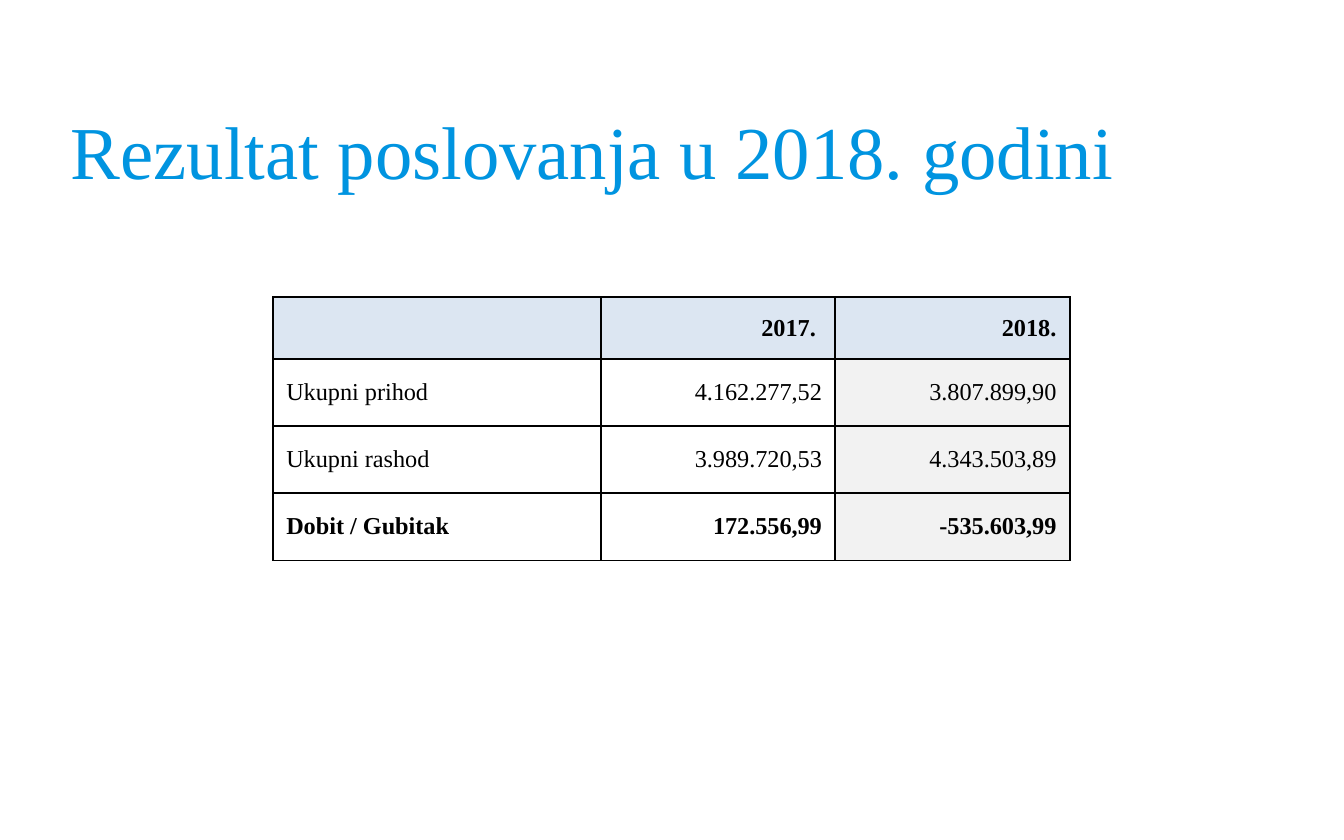
from lxml import etree
from pptx import Presentation, util as u
from pptx.dml.color import RGBColor
from pptx.enum import text
from pptx.oxml.ns import qn

# Content
TITLE = "Rezultat poslovanja u 2018. godini"
RESULTS = [
    ("", "2017. ", "2018."),
    ("Ukupni prihod", "4.162.277,52", "3.807.899,90"),
    ("Ukupni rashod", "3.989.720,53", "4.343.503,89"),
    ("Dobit / Gubitak", "172.556,99", "-535.603,99"),
]
COLUMN_WIDTHS = [2.44, 1.745, 1.745]
ROW_HEIGHTS = [0.46, 0.5, 0.5, 0.5]
BOLD_ROWS = (0, len(RESULTS) - 1)

FONT = "Times New Roman"
BLUE, BLACK, HEADER, CURRENT_YEAR = "0094E0", "000000", "DCE6F2", "F2F2F2"


def color(value):
    return RGBColor.from_string(value)


def add_run(paragraph, words, size, ink, bold=False):
    run = paragraph.add_run()
    run.text = words
    run.font.name = FONT
    run.font.size = u.Pt(size)
    run.font.bold = bold
    run.font.color.rgb = color(ink)


def add_borders(cell):
    properties = cell._tc.get_or_add_tcPr()
    for side in ("lnL", "lnR", "lnT", "lnB"):
        line = etree.SubElement(properties, qn("a:" + side), w=str(u.Pt(1)))
        fill = etree.SubElement(line, qn("a:solidFill"))
        etree.SubElement(fill, qn("a:srgbClr"), val=BLACK)


def fill_cell(cell, row, column, words):
    add_borders(cell)
    if row == 0 or column == 2:
        cell.fill.solid()
        cell.fill.fore_color.rgb = color(CURRENT_YEAR if row else HEADER)
    else:
        cell.fill.background()
    cell.vertical_anchor = text.MSO_ANCHOR.MIDDLE
    cell.margin_left = cell.margin_right = u.Inches(0.1)
    cell.margin_top = cell.margin_bottom = u.Inches(0.04)
    if words:
        paragraph = cell.text_frame.paragraphs[0]
        paragraph.alignment = text.PP_ALIGN.RIGHT if column else text.PP_ALIGN.LEFT
        paragraph.space_before = u.Pt(2.6)
        add_run(paragraph, words, 13, BLACK, row in BOLD_ROWS)


presentation = Presentation()
presentation.slide_width, presentation.slide_height = u.Inches(10), u.Inches(6.25)
slide = presentation.slides.add_slide(presentation.slide_layouts[6])

# Title
title = slide.shapes.add_textbox(
    u.Inches(0.43), u.Inches(0.53), u.Inches(9), u.Inches(1.17)).text_frame
title.word_wrap = True
title.vertical_anchor = text.MSO_ANCHOR.MIDDLE
add_run(title.paragraphs[0], TITLE, 40, BLUE)

# Table of results
results = slide.shapes.add_table(
    len(RESULTS), len(COLUMN_WIDTHS), u.Inches(2.03), u.Inches(2.21),
    u.Inches(sum(COLUMN_WIDTHS)), u.Inches(sum(ROW_HEIGHTS))).table
results.first_row = results.horz_banding = False
for column, width in zip(results.columns, COLUMN_WIDTHS):
    column.width = u.Inches(width)
for row, height in zip(results.rows, ROW_HEIGHTS):
    row.height = u.Inches(height)
for r, values in enumerate(RESULTS):
    for c, words in enumerate(values):
        fill_cell(results.cell(r, c), r, c, words)

presentation.save("out.pptx")
